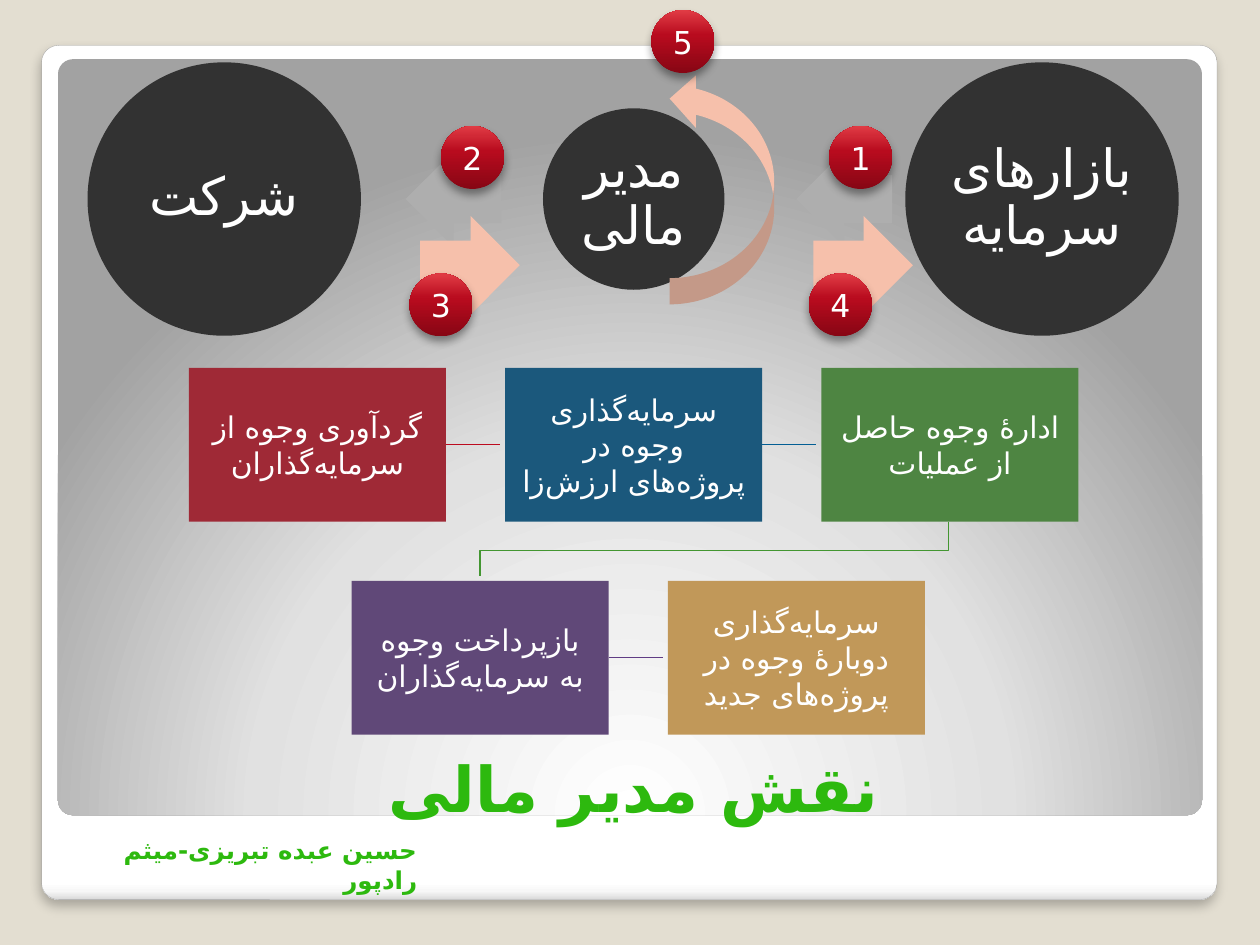
"""Build the slide on the five cash flows around a financial manager."""
from lxml.etree import SubElement
from pptx import Presentation
from pptx.dml.color import RGBColor
from pptx.enum.shapes import MSO_CONNECTOR, MSO_SHAPE
from pptx.enum.text import MSO_ANCHOR as ANCHOR, PP_ALIGN as ALIGN
from pptx.oxml.ns import qn
from pptx.util import Inches, Pt

FONT = "DejaVu Sans"
NON_JOINER = chr(8204)
COLORS = {
    "backdrop": "E3DED1", "card_edge": "A4A4A4", "heading": "2DB90E", "text": "FFFFFF",
    "party": "323232", "flow_back": "AEAEAE", "flow_out": "F6C0AB",
    "raise": "9F2936", "invest": "1B587C", "manage": "4E8542",
    "repay": "604878", "reinvest": "C19859",
    "raise_link": "BC0B1F", "invest_link": "035E94",
    "manage_link": "439631", "repay_link": "603C84",
}
CARD_STOPS = [(0, "FFFFFF"), (98, "FFFFFF"), (99, "F7F7F7"), (100, "DADADA")]
PANEL_STOPS = [(0, "FFFFFF"), (55, "E1E1E1"), (100, "A2A2A2")]
BADGE_STOPS = [(0, "870614"), (60, "B80B1E"), (100, "E13C45")]


def add_figure(kind, box, fill, angle=None, shadow=None):
    figure = shapes.add_shape(kind, *(Inches(v) for v in box))
    figure.line.fill.background()
    figure.shadow.inherit = False
    properties = figure._element.spPr
    if isinstance(fill, str):
        figure.fill.solid()
        figure.fill.fore_color.rgb = RGBColor.from_string(fill)
    else:
        figure.fill.gradient()
        gradient = properties.find(qn("a:gradFill"))
        gradient.clear()
        gradient.set("rotWithShape", "1")
        stops = SubElement(gradient, qn("a:gsLst"))
        for position, color in fill:
            stop = SubElement(stops, qn("a:gs"), pos=str(position * 1000))
            SubElement(stop, qn("a:srgbClr"), val=color)
        if angle is None:
            radial = SubElement(gradient, qn("a:path"), path="circle")
            SubElement(radial, qn("a:fillToRect"), l="50000", t="175000", r="50000", b="-75000")
        else:
            SubElement(gradient, qn("a:lin"), ang=str(angle * 60000), scaled="0")
    if shadow:
        opacity, blur, distance = shadow
        outer = SubElement(properties.find(qn("a:effectLst")), qn("a:outerShdw"),
                           blurRad=str(Pt(blur)), dist=str(Pt(distance)),
                           dir="5400000", rotWithShape="0")
        black = SubElement(outer, qn("a:srgbClr"), val="000000")
        SubElement(black, qn("a:alpha"), val=str(opacity * 1000))
    return figure


def write(holder, text, size, color="text", bold=False, align=ALIGN.CENTER,
          anchor=ANCHOR.MIDDLE, inset=None, spacing=None):
    frame = holder.text_frame
    frame.word_wrap = True
    frame.vertical_anchor = anchor
    if inset is not None:
        frame.margin_left = frame.margin_right = Inches(inset)
        frame.margin_top = frame.margin_bottom = Inches(inset)
    paragraph = frame.paragraphs[0]
    paragraph.alignment = align
    paragraph.line_spacing = spacing
    paragraph._p.get_or_add_pPr().set("rtl", "1")
    run = paragraph.add_run()
    run.text = text
    run.font.name = FONT
    run.font.size = Pt(size)
    run.font.bold = bold
    run.font.color.rgb = RGBColor.from_string(COLORS[color])
    SubElement(run._r.get_or_add_rPr(), qn("a:cs"), typeface=FONT)


deck = Presentation()
deck.slide_width, deck.slide_height = Inches(10), Inches(7.5)
slide = deck.slides.add_slide(deck.slide_layouts[5])
shapes = slide.shapes
slide.background.fill.solid()
slide.background.fill.fore_color.rgb = RGBColor.from_string(COLORS["backdrop"])

card = add_figure(MSO_SHAPE.ROUNDED_RECTANGLE, (0.33, 0.36, 9.33, 6.78),
                  CARD_STOPS, 90, (25, 6, 4))
card.line.color.rgb = RGBColor.from_string(COLORS["card_edge"])
card.line.width = Pt(0.16)
panel = add_figure(MSO_SHAPE.ROUNDED_RECTANGLE, (0.46, 0.47, 9.08, 6), PANEL_STOPS)
for backing in (card, panel):
    backing.adjustments[0] = 0.02

authors = shapes.add_textbox(Inches(0.33), Inches(6.58), Inches(3.08), Inches(0.34))
write(authors, "حسین عبده تبریزی-میثم رادپور", 14, "heading", True, ALIGN.RIGHT, ANCHOR.TOP)

title = shapes.title
title.left, title.top = Inches(0.55), Inches(5.45)
title.width, title.height = Inches(8.95), Inches(1.15)
write(title, "نقش مدیر مالی", 36, "heading", True, anchor=ANCHOR.BOTTOM)
shapes._spTree.append(title._element)

STEP_WIDTH, STEP_HEIGHT, STEP_GAP = 2.04, 1.22, 0.47
STEP_ROWS = [
    (1.5, 2.92, [("raise", f"گردآوری وجوه از {NON_JOINER}سرمایه{NON_JOINER}گذاران"),
                 ("invest", f"سرمایه{NON_JOINER}گذاری وجوه در پروژه{NON_JOINER}های ارزش{NON_JOINER}زا"),
                 ("manage", "ادارۀ وجوه حاصل از عملیات")]),
    (2.79, 4.61, [("repay", f"بازپرداخت وجوه به سرمایه{NON_JOINER}گذاران"),
                  ("reinvest", f"سرمایه{NON_JOINER}گذاری دوبارۀ وجوه در پروژه{NON_JOINER}های جدید")]),
]
for row_left, row_top, steps in STEP_ROWS:
    for column, (step, wording) in enumerate(steps):
        left = row_left + column * (STEP_WIDTH + STEP_GAP)
        box = add_figure(MSO_SHAPE.RECTANGLE, (left, row_top, STEP_WIDTH, STEP_HEIGHT),
                         COLORS[step])
        write(box, wording, 17, inset=0.13)
        if column < len(steps) - 1:
            start, middle = left + STEP_WIDTH, row_top + STEP_HEIGHT / 2
            link = shapes.add_connector(MSO_CONNECTOR.STRAIGHT, Inches(start), Inches(middle),
                                        Inches(start + 0.43), Inches(middle))
            link.line.color.rgb = RGBColor.from_string(COLORS[step + "_link"])
            link.line.width = Pt(0.75)
            SubElement(link._element.spPr, qn("a:effectLst"))

turn = shapes.build_freeform(Inches(7.53), Inches(4.14))
turn.add_line_segments([(Inches(x), Inches(y)) for x, y in
                        [(7.53, 4.37), (3.81, 4.37), (3.81, 4.57)]], close=False)
row_link = turn.convert_to_shape()
row_link.fill.background()
row_link.line.color.rgb = RGBColor.from_string(COLORS["manage_link"])
row_link.line.width = Pt(0.75)
row_link.shadow.inherit = False

PARTY_MIDDLE = 1.58
for center, diameter, party in [(1.78, 2.17, "شرکت"), (5.03, 1.44, "مدیر مالی"),
                                (8.27, 2.17, "بازارهای سرمایه")]:
    circle = add_figure(MSO_SHAPE.OVAL, (center - diameter / 2, PARTY_MIDDLE - diameter / 2,
                                         diameter, diameter), COLORS["party"])
    write(circle, party, 30, inset=0.04, spacing=0.9)

for kind, box, rotation, tone in [
    (MSO_SHAPE.UP_ARROW, (3.22, 1.2, 0.76, 0.76), 270, "flow_back"),
    (MSO_SHAPE.UP_ARROW, (6.32, 1.2, 0.76, 0.76), 270, "flow_back"),
    (MSO_SHAPE.UP_ARROW, (3.34, 1.71, 0.78, 0.79), 90, "flow_out"),
    (MSO_SHAPE.UP_ARROW, (6.46, 1.71, 0.78, 0.79), 90, "flow_out"),
    (MSO_SHAPE.CURVED_UP_ARROW, (4.81, 1.08, 1.84, 0.83), 270, "flow_out"),
]:
    add_figure(kind, box, COLORS[tone]).rotation = rotation

BADGE_SPOTS = [(6.58, 1), (3.5, 1), (3.25, 2.17), (6.42, 2.17), (5.17, 0.08)]
for number, (left, top) in enumerate(BADGE_SPOTS, start=1):
    badge = add_figure(MSO_SHAPE.FLOWCHART_CONNECTOR, (left, top, 0.5, 0.5),
                       BADGE_STOPS, 270, (40, 5.2, 3))
    write(badge, str(number), 18, inset=0)

deck.save("out.pptx")
